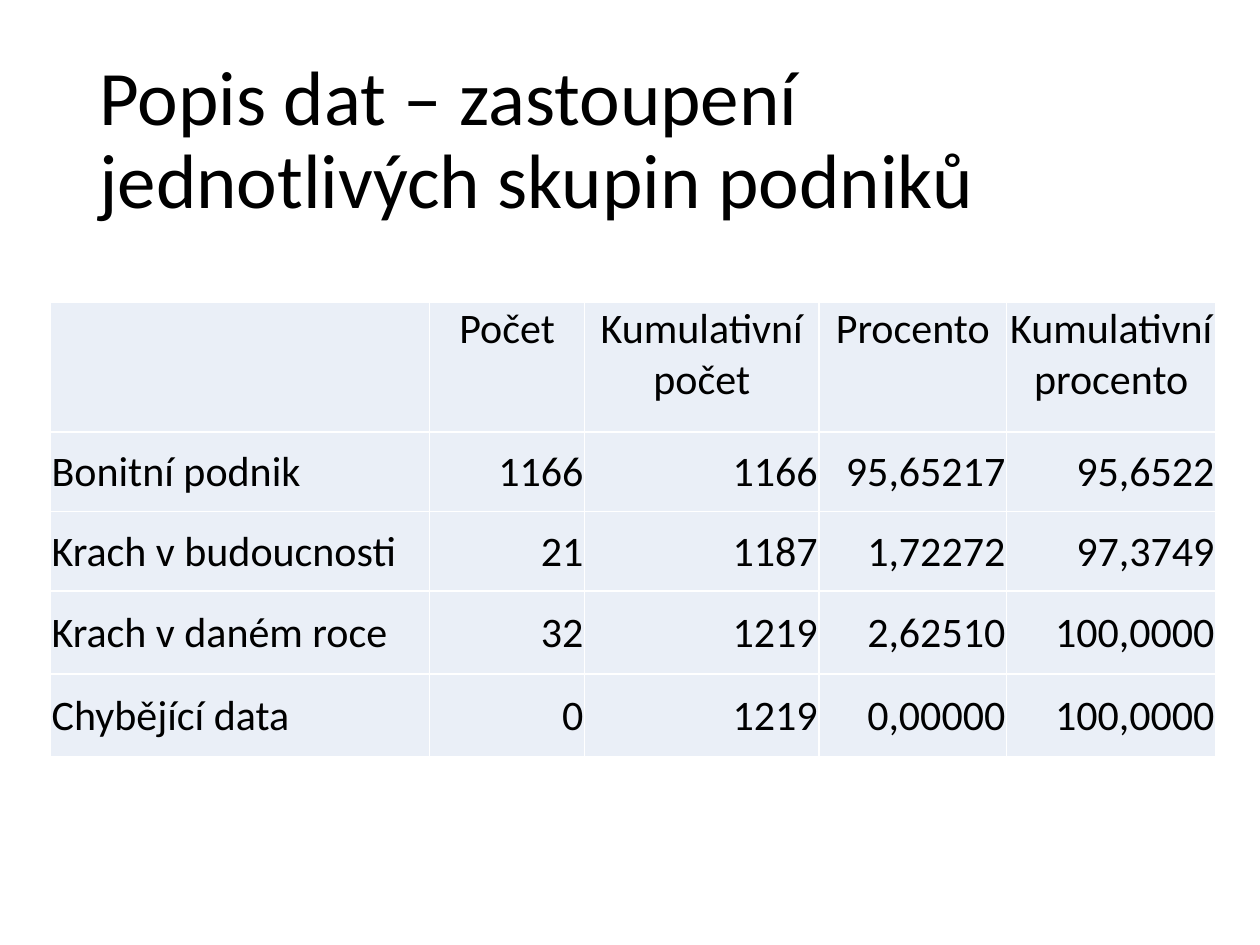
from lxml import etree
from pptx import Presentation
from pptx.dml.color import RGBColor
from pptx.enum import text
from pptx.oxml import ns
from pptx.util import Inches, Pt

BLACK, WHITE, PALE_BLUE = "000000", "FFFFFF", "EAEFF7"
TITLE = "Popis dat – zastoupení jednotlivých skupin podniků"
COLUMN_WIDTHS = [3.01, 1.23, 1.86, 1.49, 1.66]
ROW_HEIGHTS = [1.03, 0.63, 0.63, 0.66, 0.66]
GROUP_COUNTS = [
    ["", "Počet", "Kumulativní počet", "Procento", "Kumulativní procento"],
    ["Bonitní podnik", "1166", "1166", "95,65217", "95,6522"],
    ["Krach v budoucnosti", "21", "1187", "1,72272", "97,3749"],
    ["Krach v daném roce", "32", "1219", "2,62510", "100,0000"],
    ["Chybějící data", "0", "1219", "0,00000", "100,0000"],
]
CELL_MARGINS = {"margin_left": 0.01, "margin_right": 0.01,
                "margin_top": 0.01, "margin_bottom": 0}


def color(value):
    return RGBColor.from_string(value)


def style_font(paragraph, size):
    font = paragraph.font
    for name, value in {"name": "Calibri", "size": Pt(size), "bold": False}.items():
        setattr(font, name, value)
    font.color.rgb = color(BLACK)


def add_title(slide):
    frame = slide.shapes.add_textbox(
        Inches(0.69), Inches(0.4), Inches(8.62), Inches(1.45)).text_frame
    frame.word_wrap = True
    frame.vertical_anchor = text.MSO_ANCHOR.MIDDLE
    paragraph = frame.paragraphs[0]
    paragraph.text = TITLE
    paragraph.line_spacing = 0.9
    style_font(paragraph, 44)


def set_borders(cell, line_color, width):
    """Draw all four sides; the lines must stand before the fill."""
    properties = cell._tc.get_or_add_tcPr()
    for position, side in enumerate(("lnL", "lnR", "lnT", "lnB")):
        line = etree.Element(ns.qn(f"a:{side}"), w=str(Pt(width)))
        fill = etree.SubElement(line, ns.qn("a:solidFill"))
        etree.SubElement(fill, ns.qn("a:srgbClr"), val=line_color)
        properties.insert(position, line)


def fill_cell(cell, content, alignment, anchor):
    for name, value in CELL_MARGINS.items():
        setattr(cell, name, Inches(value))
    cell.vertical_anchor = anchor
    cell.fill.solid()
    cell.fill.fore_color.rgb = color(PALE_BLUE)
    set_borders(cell, WHITE, 1)
    paragraph = cell.text_frame.paragraphs[0]
    paragraph.text = content
    paragraph.alignment = alignment
    style_font(paragraph, 24)


def add_group_table(slide):
    table = slide.shapes.add_table(
        len(ROW_HEIGHTS), len(COLUMN_WIDTHS), Inches(0.4), Inches(2.4),
        Inches(sum(COLUMN_WIDTHS)), Inches(sum(ROW_HEIGHTS))).table
    table.first_row = table.horz_banding = False
    for column, width in zip(table.columns, COLUMN_WIDTHS):
        column.width = Inches(width)
    for row, height in zip(table.rows, ROW_HEIGHTS):
        row.height = Inches(height)
    align, anchors = text.PP_ALIGN, text.MSO_ANCHOR
    for r, values in enumerate(GROUP_COUNTS):
        anchor = anchors.MIDDLE if r else anchors.TOP
        for c, value in enumerate(values):
            body_alignment = align.RIGHT if c else align.LEFT
            fill_cell(table.cell(r, c), value,
                      body_alignment if r else align.CENTER, anchor)


def main():
    deck = Presentation()
    deck.slide_width, deck.slide_height = Inches(10), Inches(7.5)
    slide = deck.slides.add_slide(deck.slide_layouts[6])
    add_title(slide)
    add_group_table(slide)
    deck.save("out.pptx")


if __name__ == "__main__":
    main()
